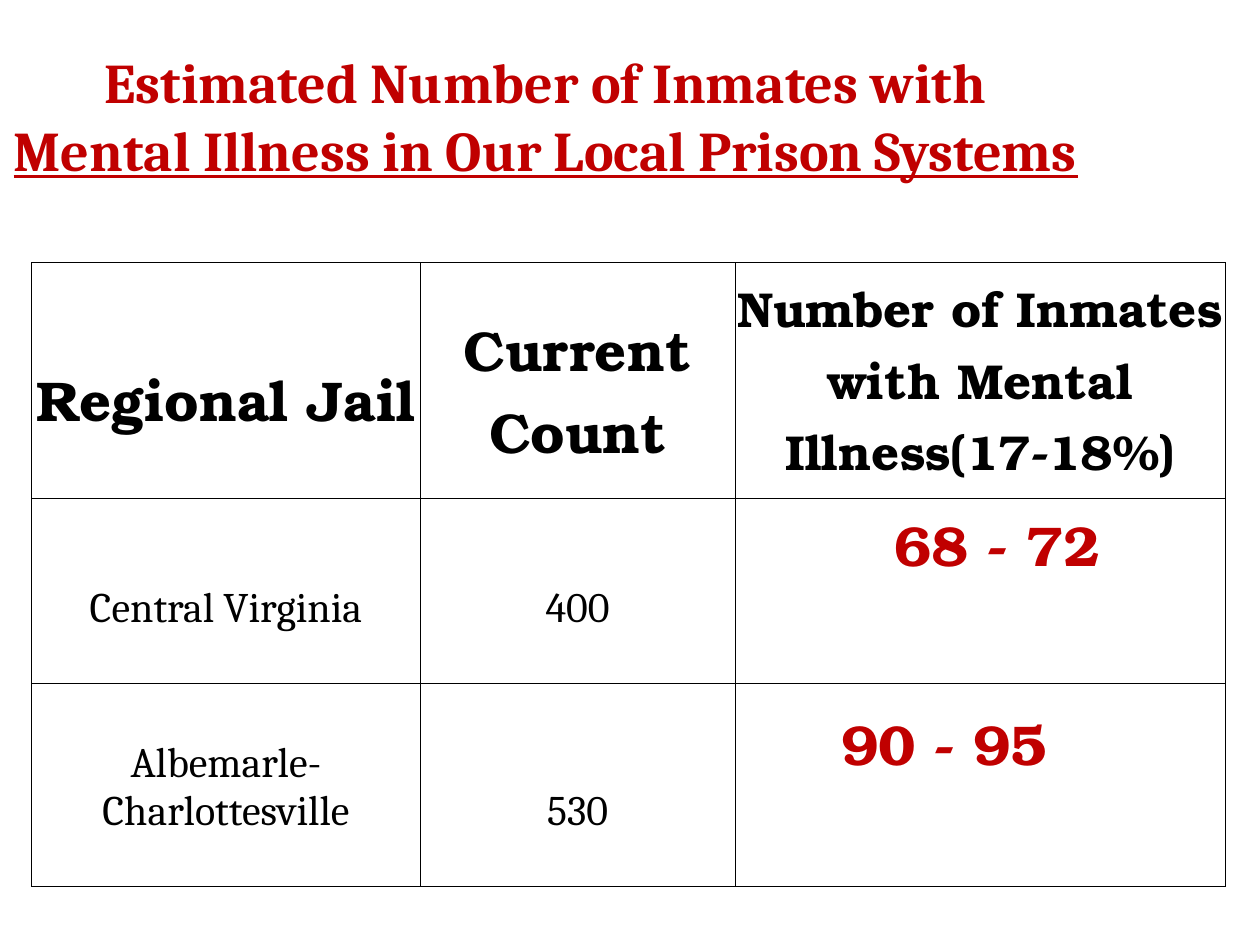
from lxml import etree
from pptx import Presentation
from pptx.dml.color import RGBColor
from pptx.enum.text import MSO_ANCHOR, MSO_AUTO_SIZE, PP_ALIGN
from pptx.oxml.ns import qn
from pptx.util import Cm, Pt

BLACK = RGBColor(0x00, 0x00, 0x00)
RED = RGBColor(0xC0, 0x00, 0x00)
BODY_FONT, DISPLAY_FONT = "Cambria", "TeX Gyre Bonum"
CENTER = PP_ALIGN.CENTER
TOP, BOTTOM = MSO_ANCHOR.TOP, MSO_ANCHOR.BOTTOM
NO_AUTOFIT = MSO_AUTO_SIZE.NONE

TITLE = ("Estimated Number of Inmates with", "Mental Illness in Our Local Prison Systems")
COL_WIDTHS = (7.83, 6.35, 9.88)
ROW_HEIGHTS = (4.75, 3.73, 4.09)
# Header text, size in points, space below in cm
HEADERS = (
    ("Regional Jail", 32, 1.2),
    ("Current Count", 32, 0.55),
    ("Number of Inmates with Mental Illness(17-18%)", 28, 0.25),
)
JAILS = (("Central Virginia", "400"), ("Albemarle-Charlottesville", "530"))
BODY_SPACE_BELOW = 1
# Estimate, left and top in cm
ESTIMATES = (("68 - 72", 17.78, 10.16), ("90 - 95", 16.72, 14.18))


def style_run(r, font, size, color=BLACK, bold=False):
    r.font.name = font
    r.font.size = Pt(size)
    r.font.color.rgb = color
    r.font.bold = bold


def add_title(s):
    title = s.shapes.title
    title.left, title.top, title.width, title.height = Cm(0.2), Cm(0.84), Cm(21.6), Cm(3)
    tf = title.text_frame
    tf.auto_size = NO_AUTOFIT
    tf.word_wrap = True
    tf.vertical_anchor = TOP
    tf.margin_left = tf.margin_right = 0
    tf.text = "\v".join(TITLE)
    p = tf.paragraphs[0]
    p.alignment = CENTER
    for r in p.runs:
        style_run(r, BODY_FONT, 32, RED, True)
    p.runs[-1].font.underline = True


def set_borders(cell):
    tc_pr = cell._tc.get_or_add_tcPr()
    for i, side in enumerate(("lnL", "lnR", "lnT", "lnB")):
        ln = etree.Element(qn(f"a:{side}"), w=str(Pt(0.5)))
        fill = etree.SubElement(ln, qn("a:solidFill"))
        etree.SubElement(fill, qn("a:srgbClr"), val=str(BLACK))
        tc_pr.insert(i, ln)


def fill_cell(cell, text, font, size, bold, space_below):
    cell.text = text
    cell.vertical_anchor = BOTTOM
    cell.margin_left = cell.margin_right = cell.margin_top = Cm(0.03)
    cell.margin_bottom = Cm(space_below)
    p = cell.text_frame.paragraphs[0]
    p.alignment = CENTER
    style_run(p.runs[0], font, size, bold=bold)


def add_jail_table(s):
    frame = s.shapes.add_table(len(ROW_HEIGHTS), len(COL_WIDTHS), Cm(0.64), Cm(5.29),
                               Cm(sum(COL_WIDTHS)), Cm(sum(ROW_HEIGHTS)))
    table = frame.table
    table.first_row = table.horz_banding = False
    for column, width in zip(table.columns, COL_WIDTHS):
        column.width = Cm(width)
    for row, height in zip(table.rows, ROW_HEIGHTS):
        row.height = Cm(height)
    for cell in table.iter_cells():
        cell.fill.background()
        set_borders(cell)
    for col, (text, size, space_below) in enumerate(HEADERS):
        fill_cell(table.cell(0, col), text, DISPLAY_FONT, size, True, space_below)
    for row, values in enumerate(JAILS, start=1):
        for col, text in enumerate(values):
            fill_cell(table.cell(row, col), text, BODY_FONT, 24, False, BODY_SPACE_BELOW)


def add_estimate(s, text, left, top):
    sp = s.shapes.add_textbox(Cm(left), Cm(top), Cm(6.9), Cm(1.63))
    tf = sp.text_frame
    tf.word_wrap = True
    tf.text = text
    style_run(tf.paragraphs[0].runs[0], DISPLAY_FONT, 32, RED, True)


def main():
    prs = Presentation()
    prs.slide_width, prs.slide_height = Cm(25.4), Cm(19.05)
    s = prs.slides.add_slide(prs.slide_layouts[5])  # Title Only

    # Heading
    add_title(s)

    # Jail counts
    add_jail_table(s)

    # Estimates placed over the last column
    for text, left, top in ESTIMATES:
        add_estimate(s, text, left, top)

    prs.save("out.pptx")


if __name__ == "__main__":
    main()
